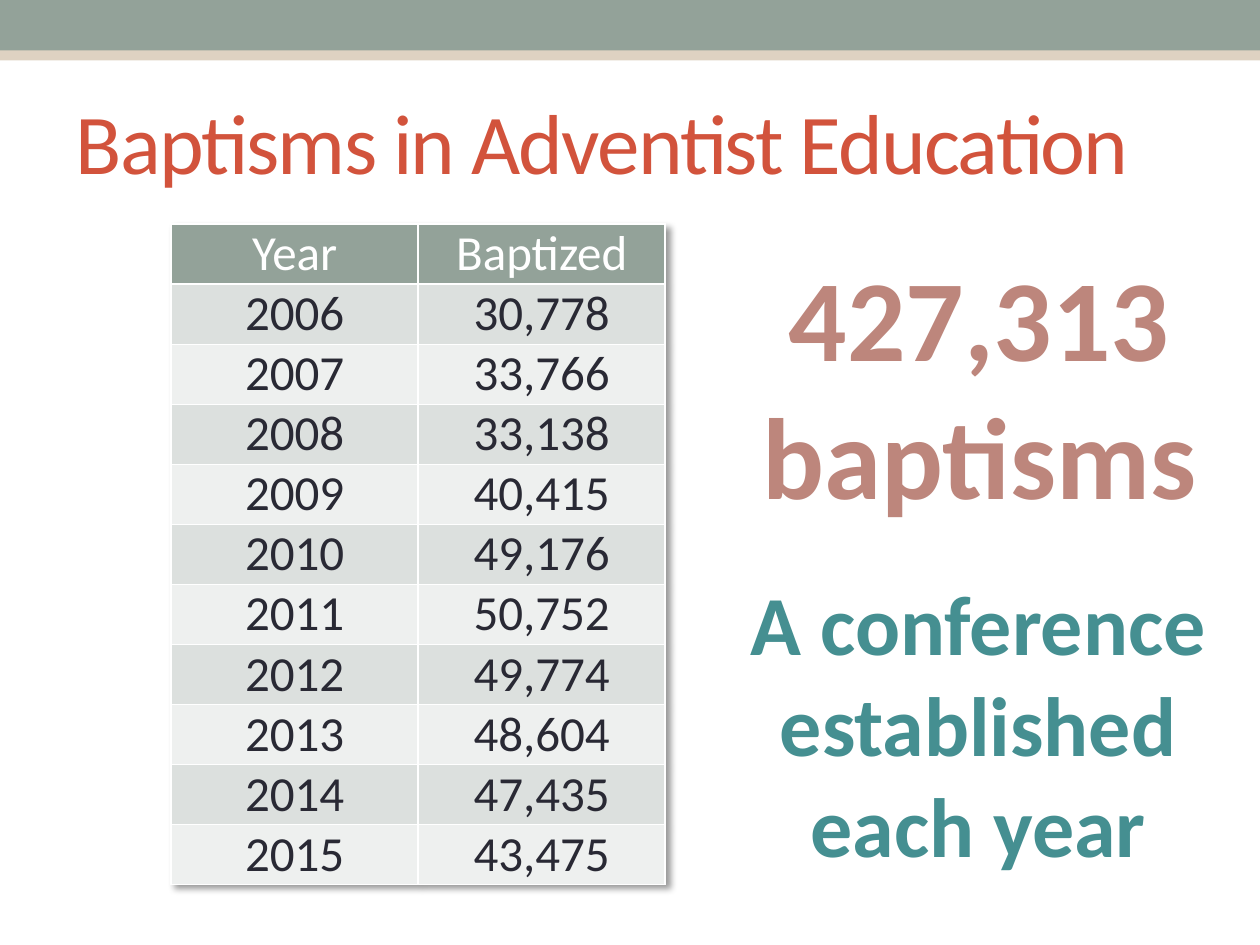
import pptx
import pptx.dml.color
import pptx.enum.shapes
import pptx.enum.text
import pptx.oxml
import pptx.oxml.ns
import pptx.util

Cm = pptx.util.Cm
Pt = pptx.util.Pt
ALIGN = pptx.enum.text.PP_ALIGN
ANCHOR = pptx.enum.text.MSO_ANCHOR
AUTO_SIZE = pptx.enum.text.MSO_AUTO_SIZE

TITLE = "Baptisms in Adventist Education"
HEADER = ("Year", "Baptized")
BAPTISMS = [
    ("2006", "30,778"),
    ("2007", "33,766"),
    ("2008", "33,138"),
    ("2009", "40,415"),
    ("2010", "49,176"),
    ("2011", "50,752"),
    ("2012", "49,774"),
    ("2013", "48,604"),
    ("2014", "47,435"),
    ("2015", "43,475"),
]
CALLOUTS = [
    {"lines": ["427,313", "baptisms"], "box": (15.06, 4.83, 9.37, 5.89),
     "size": "total", "color": "rose"},
    {"lines": ["A conference\vestablished\veach year"], "box": (14.83, 11.4, 9.78, 6.4),
     "size": "message", "color": "teal"},
]
BANDS = [("sand", 0.2), ("sage", 0)]

THEME = {
    "font": "Calibri",
    "sizes": {"title": 48.6, "table": 28, "total": 66, "message": 48},
    "colors": {
        "sand": "DED2C2", "sage": "93A299", "red": "D2533C", "white": "FFFFFF",
        "ink": "292934", "rose": "BD867C", "teal": "458F91",
        "dark_row": "DCE0DE", "light_row": "EEF0EF",
    },
}

SLIDE_WIDTH, SLIDE_HEIGHT = 25.4, 19.05
BAND_HEIGHT = 1.02
TITLE_BOX = (1.27, 1.47, 22.86, 2.74)
TABLE_LEFT, TABLE_TOP = 3.45, 4.52
COLUMN_WIDTH, ROW_HEIGHT = 4.98, 1.21


def rgb(name):
    return pptx.dml.color.RGBColor.from_string(THEME["colors"][name])


def write_text(frame, lines, size, color, bold=False, align=ALIGN.CENTER, spacing=None):
    for index, line in enumerate(lines):
        paragraph = frame.add_paragraph() if index else frame.paragraphs[0]
        paragraph.text = line
        paragraph.alignment = align
        for run in paragraph.runs:
            run.font.name = THEME["font"]
            run.font.size = Pt(THEME["sizes"][size])
            run.font.bold = bold
            run.font.color.rgb = rgb(color)
            if spacing is not None:
                run.font._element.set("spc", str(spacing))


def add_band(slide, color, top):
    shape = slide.shapes.add_shape(
        pptx.enum.shapes.MSO_SHAPE.RECTANGLE, 0, Cm(top), Cm(SLIDE_WIDTH), Cm(BAND_HEIGHT))
    shape.shadow.inherit = False
    shape.fill.solid()
    shape.fill.fore_color.rgb = rgb(color)
    shape.line.fill.background()


def set_title(slide):
    title = slide.shapes.title
    title.left, title.top, title.width, title.height = map(Cm, TITLE_BOX)
    frame = title.text_frame
    frame.auto_size = AUTO_SIZE.NONE
    frame.vertical_anchor = ANCHOR.MIDDLE
    write_text(frame, [TITLE], "title", "red", align=ALIGN.LEFT, spacing=-100)


def set_borders(cell):
    properties = cell._tc.get_or_add_tcPr()
    for index, side in enumerate(("lnL", "lnR", "lnT", "lnB")):
        border = pptx.oxml.parse_xml(
            f'<a:{side} {pptx.oxml.ns.nsdecls("a")} w="{Pt(1)}"><a:solidFill>'
            f'<a:srgbClr val="{THEME["colors"]["white"]}"/></a:solidFill></a:{side}>')
        properties.insert(index, border)


def add_table_shadow(table):
    shadow = pptx.oxml.parse_xml(
        f'<a:effectLst {pptx.oxml.ns.nsdecls("a")}>'
        f'<a:outerShdw blurRad="{Pt(4)}" dist="{Pt(3)}" dir="2700000" algn="tl" rotWithShape="0">'
        '<a:srgbClr val="000000"><a:alpha val="40000"/></a:srgbClr>'
        '</a:outerShdw></a:effectLst>')
    table._tbl.tblPr.insert(0, shadow)


def add_baptism_table(slide):
    rows = [HEADER, *BAPTISMS]
    table = slide.shapes.add_table(
        len(rows), len(HEADER), Cm(TABLE_LEFT), Cm(TABLE_TOP),
        Cm(COLUMN_WIDTH * len(HEADER)), Cm(ROW_HEIGHT * len(rows))).table
    table.horz_banding = False
    add_table_shadow(table)
    for column in table.columns:
        column.width = Cm(COLUMN_WIDTH)
    for row_index, values in enumerate(rows):
        table.rows[row_index].height = Cm(ROW_HEIGHT)
        if row_index == 0:
            fill, color = "sage", "white"
        else:
            fill, color = ("dark_row" if row_index % 2 else "light_row"), "ink"
        for column_index, value in enumerate(values):
            cell = table.cell(row_index, column_index)
            cell.margin_top = cell.margin_bottom = 0
            cell.fill.solid()
            cell.fill.fore_color.rgb = rgb(fill)
            set_borders(cell)
            write_text(cell.text_frame, [value], "table", color)


def add_callout(slide, lines, box, size, color):
    frame = slide.shapes.add_textbox(*map(Cm, box)).text_frame
    frame.word_wrap = False
    frame.auto_size = AUTO_SIZE.SHAPE_TO_FIT_TEXT
    write_text(frame, lines, size, color, bold=True)


def main():
    presentation = pptx.Presentation()
    presentation.slide_width = Cm(SLIDE_WIDTH)
    presentation.slide_height = Cm(SLIDE_HEIGHT)
    slide = presentation.slides.add_slide(presentation.slide_layouts[5])
    for color, top in BANDS:
        add_band(slide, color, top)
    set_title(slide)
    add_baptism_table(slide)
    for callout in CALLOUTS:
        add_callout(slide, **callout)
    presentation.save("out.pptx")


if __name__ == "__main__":
    main()
